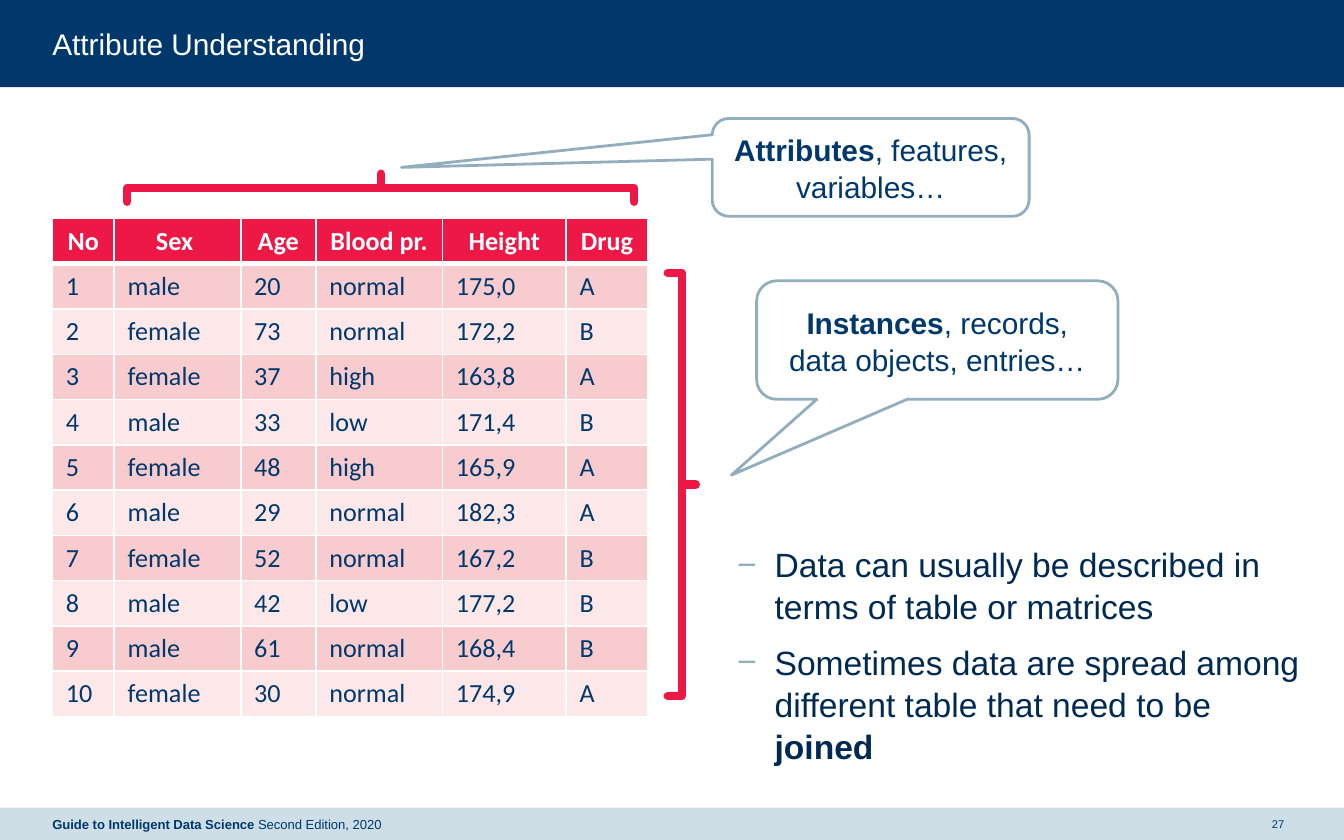
"""Build the attribute understanding slide: a data table, two braces, two callouts and a list."""
import pptx
import pptx.dml.color
import pptx.enum.shapes
import pptx.enum.text
import pptx.oxml
import pptx.oxml.ns
import pptx.util
from lxml import etree

Cm = pptx.util.Cm
Pt = pptx.util.Pt
SHAPE = pptx.enum.shapes.MSO_SHAPE
ALIGN = pptx.enum.text.PP_ALIGN
ANCHOR = pptx.enum.text.MSO_ANCHOR

THEME = {
    "navy": "00386C", "ink": "002A51", "steel": "92AEBC", "mist": "CDDEE7",
    "red": "ED1846", "rose": "F8CCCF", "blush": "FCE8E9", "white": "FFFFFF",
    "sans": "Arial", "table_font": "Calibri",
    "heading": 16, "list": 18, "cell": 14, "footer": 7, "number": 6,
}

TITLE = [[("Attribute Understanding", False)]]
POINTS = [
    [("Data can usually be described in terms of table or matrices", False)],
    [("Sometimes data are spread among different table that need to be ", False), ("joined", True)],
]
HEADER = ["No", "Sex ", "Age", "Blood pr.", "Height", "Drug"]
PATIENTS = [
    ("male", "20", "normal", "175,0", "A"),
    ("female", "73", "normal", "172,2", "B"),
    ("female", "37", "high", "163,8", "A"),
    ("male", "33", "low", "171,4", "B"),
    ("female", "48", "high", "165,9", "A"),
    ("male", "29", "normal", "182,3", "A"),
    ("female", "52", "normal", "167,2", "B"),
    ("male", "42", "low", "177,2", "B"),
    ("male", "61", "normal", "168,4", "B"),
    ("female", "30", "normal", "174,9", "A"),
]
COLUMN_WIDTHS = [1.17, 2.39, 1.42, 2.39, 2.34, 1.54]
ROW_HEIGHT = 0.85
MARGIN = 0.99
SLIDE_WIDTH, SLIDE_HEIGHT = 25.4, 15.88
FOOTER_TOP = 15.27
FOOTER_HEIGHT = SLIDE_HEIGHT - FOOTER_TOP

BARS = [
    ((0, 0, SLIDE_WIDTH, 1.65), "navy"),
    ((0, FOOTER_TOP, SLIDE_WIDTH, FOOTER_HEIGHT), "mist"),
]
CALLOUTS = [
    ((14.3, 5.31, 6.83, 2.24), (-0.57, 1.14, 0.17),
     [("Instances", True), (", records, data objects, entries…", False)]),
    ((13.46, 2.24, 5.99, 1.85), (-1.48, 0, 0.17),
     [("Attributes", True), (", features, variables…", False)]),
]
BRACES = [((12.62, 5.16, 0.53, 8), 180), ((6.93, -1.24, 0.53, 9.58), 90)]
FOOTERS = [
    ((MARGIN, FOOTER_TOP, 11.15, FOOTER_HEIGHT), "footer", ALIGN.LEFT,
     [("Guide to Intelligent Data Science ", True), ("Second Edition, 2020", False)]),
    ((23.9, FOOTER_TOP, 0.51, FOOTER_HEIGHT), "number", ALIGN.CENTER, [("27", False)]),
]


def color(name):
    return pptx.dml.color.RGBColor.from_string(THEME[name])


def lengths(box):
    return [Cm(value) for value in box]


def write(frame, paragraphs, size="heading", ink="navy", font="sans", align=ALIGN.LEFT,
          anchor=ANCHOR.MIDDLE, inset=None, spacing=None, before=0, bullet=None):
    frame.word_wrap = True
    frame.vertical_anchor = anchor
    if inset is not None:
        frame.margin_left = frame.margin_top = frame.margin_right = frame.margin_bottom = Cm(inset)
    for index, spans in enumerate(paragraphs):
        para = frame.add_paragraph() if index else frame.paragraphs[0]
        para.alignment = align
        para.space_before = Pt(before)
        if spacing:
            para.line_spacing = spacing
        if bullet:
            add_bullet(para, bullet)
        for text, bold in spans:
            span = para.add_run()
            span.text = text
            span.font.name = THEME[font]
            span.font.size = Pt(THEME[size])
            span.font.bold = bold
            span.font.color.rgb = color(ink)


def add_bullet(para, symbol):
    properties = para._p.get_or_add_pPr()
    properties.set("marL", str(Cm(0.72)))
    properties.set("indent", str(Cm(-0.71)))
    tint = etree.SubElement(properties, pptx.oxml.ns.qn("a:buClr"))
    etree.SubElement(tint, pptx.oxml.ns.qn("a:srgbClr"), val=THEME["steel"])
    etree.SubElement(properties, pptx.oxml.ns.qn("a:buChar"), char=symbol)


def add_borders(cell, widths):
    properties = cell._tc.get_or_add_tcPr()
    for side, width in widths.items():
        line = etree.SubElement(properties, pptx.oxml.ns.qn("a:ln" + side), w=str(Pt(width)))
        solid = etree.SubElement(line, pptx.oxml.ns.qn("a:solidFill"))
        etree.SubElement(solid, pptx.oxml.ns.qn("a:srgbClr"), val=THEME["white"])


def add_outline(slide, kind, box, line, width, adjustments):
    shape = slide.shapes.add_shape(kind, *lengths(box))
    shape.shadow.inherit = False
    shape.fill.background()
    shape.line.color.rgb = color(line)
    shape.line.width = Pt(width)
    for index, value in enumerate(adjustments):
        shape.adjustments[index] = value
    return shape


def add_bars(slide):
    for box, fill in BARS:
        bar = slide.shapes.add_shape(SHAPE.RECTANGLE, *lengths(box))
        bar.shadow.inherit = False
        bar.fill.solid()
        bar.fill.fore_color.rgb = color(fill)
        bar.line.fill.background()
        slide.shapes.title.element.addprevious(bar.element)


def fill_placeholder(holder, box, paragraphs, **style):
    holder.left, holder.top, holder.width, holder.height = lengths(box)
    holder.text_frame.auto_size = pptx.enum.text.MSO_AUTO_SIZE.NONE
    write(holder.text_frame, paragraphs, inset=0, **style)


def add_patient_table(slide):
    rows = [HEADER] + [(str(number), *patient) for number, patient in enumerate(PATIENTS, 1)]
    box = (MARGIN, 4.13, sum(COLUMN_WIDTHS), ROW_HEIGHT * len(rows))
    table = slide.shapes.add_table(len(rows), len(HEADER), *lengths(box)).table
    for column, width in zip(table.columns, COLUMN_WIDTHS):
        column.width = Cm(width)
    for row_index, values in enumerate(rows):
        table.rows[row_index].height = Cm(ROW_HEIGHT)
        is_header = row_index == 0
        fill = "red" if is_header else ("blush", "rose")[row_index % 2]
        top, bottom = (1, 3) if is_header else (3 if row_index == 1 else 1, 1)
        for column_index, value in enumerate(values):
            cell = table.cell(row_index, column_index)
            add_borders(cell, {"L": 1, "R": 1, "T": top, "B": bottom})
            cell.fill.solid()
            cell.fill.fore_color.rgb = color(fill)
            write(cell.text_frame, [[(value, is_header)]], size="cell", font="table_font",
                  ink="white" if is_header else "navy", anchor=ANCHOR.TOP,
                  align=ALIGN.CENTER if is_header else ALIGN.LEFT)


def main():
    deck = pptx.Presentation()
    deck.slide_width, deck.slide_height = Cm(SLIDE_WIDTH), Cm(SLIDE_HEIGHT)
    slide = deck.slides.add_slide(deck.slide_layouts[1])
    add_bars(slide)
    fill_placeholder(slide.shapes.title, (MARGIN, 0.48, 23.42, 0.69), TITLE, ink="white")
    fill_placeholder(slide.placeholders[1], (13.92, 10.26, 10.77, 4.24), POINTS, size="list",
                     ink="ink", anchor=ANCHOR.TOP, spacing=1.04, before=7.5, bullet="−")
    add_patient_table(slide)
    for box, adjustments, spans in CALLOUTS:
        callout = add_outline(slide, SHAPE.ROUNDED_RECTANGULAR_CALLOUT, box, "steel", 1.5, adjustments)
        write(callout.text_frame, [spans], align=ALIGN.CENTER, spacing=1.04)
    for box, rotation in BRACES:
        brace = add_outline(slide, SHAPE.LEFT_BRACE, box, "red", 4.5, (0, 0.5))
        brace.rotation = rotation
        brace.line._get_or_add_ln().set("cap", "rnd")
    for box, size, align, spans in FOOTERS:
        label = slide.shapes.add_textbox(*lengths(box))
        write(label.text_frame, [spans], size=size, align=align, inset=0)
    deck.save("out.pptx")


if __name__ == "__main__":
    main()
